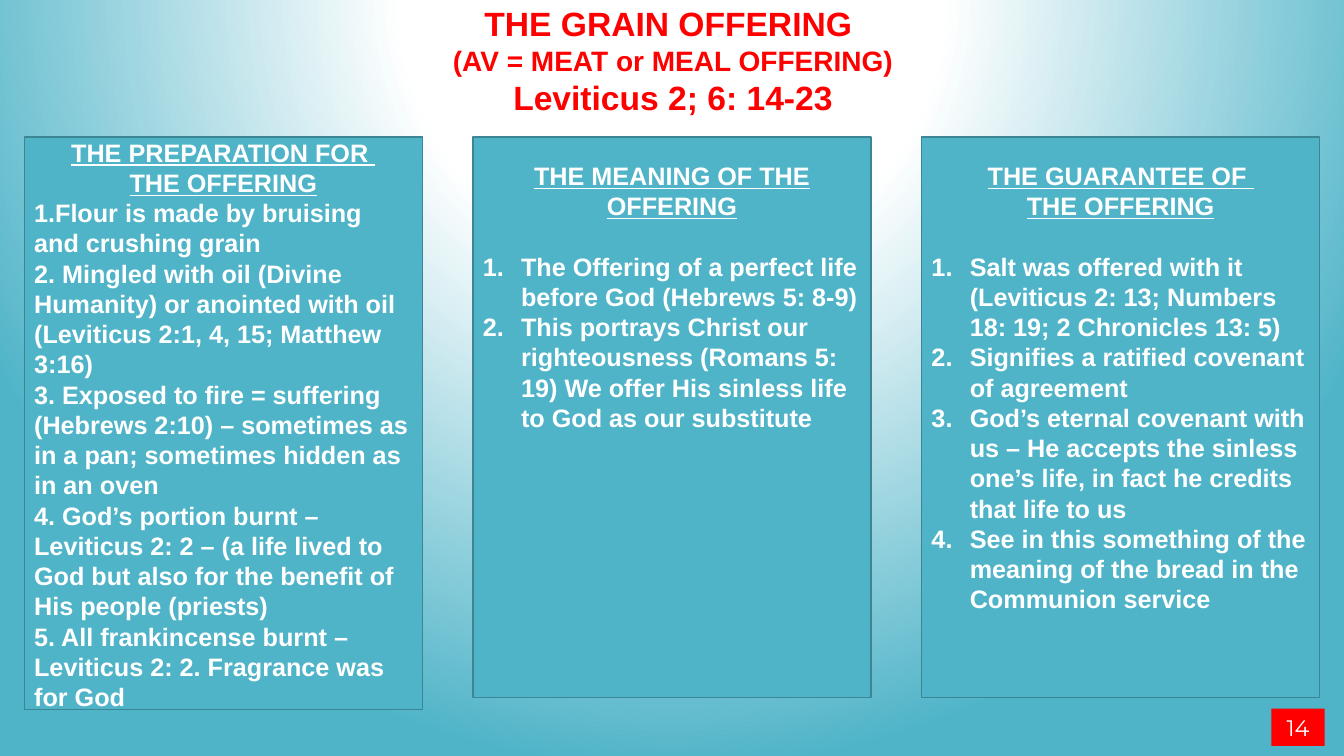
import dataclasses

import lxml.etree
import pptx
import pptx.dml.color
import pptx.enum.shapes
import pptx.enum.text
import pptx.oxml
import pptx.oxml.ns
import pptx.util

Inches = pptx.util.Inches
Pt = pptx.util.Pt
Align = pptx.enum.text.PP_ALIGN
Anchor = pptx.enum.text.MSO_ANCHOR


@dataclasses.dataclass(frozen=True)
class Theme:
    white: str = "FFFFFF"
    teal: str = "50B4C8"
    outline: str = "3B8594"
    red: str = "FF0000"
    font: str = "Arial"
    number_font: str = "Montserrat"
    title_size: int = 24
    subtitle_size: int = 20
    body_size: int = 18
    number_size: int = 16
    line_ratio: float = 1.2


THEME = Theme()

TITLE_LINES = [
    ("THE GRAIN OFFERING ", THEME.title_size),
    ("(AV = MEAT or MEAL OFFERING)", THEME.subtitle_size),
    ("Leviticus 2; 6: 14-23", THEME.title_size),
]

COLUMNS = [
    {
        "heading": ["THE PREPARATION FOR ", "THE OFFERING"],
        "points": [
            "1.Flour is made by bruising and crushing grain",
            "2. Mingled with oil (Divine Humanity) or anointed with oil (Leviticus 2:1, 4, 15; Matthew 3:16)",
            "3. Exposed to fire = suffering (Hebrews 2:10) – sometimes as in a pan; sometimes hidden as in an oven",
            "4. God’s portion burnt – Leviticus 2: 2 – (a life lived to God but also for the benefit of "
            "His people (priests)",
            "5. All frankincense burnt – Leviticus 2: 2. Fragrance was for God",
        ],
        "numbered": False, "height": 5.68, "top_inset": 0,
    },
    {
        "heading": ["THE MEANING OF THE OFFERING"],
        "points": [
            "The Offering of a perfect life before God (Hebrews 5: 8-9)",
            "This portrays Christ our righteousness (Romans 5: 19) We offer His sinless life to God "
            "as our substitute",
        ],
        "numbered": True, "height": 5.56, "top_inset": 0.23,
    },
    {
        "heading": ["THE GUARANTEE OF ", "THE OFFERING"],
        "points": [
            "Salt was offered with it (Leviticus 2: 13; Numbers 18: 19; 2 Chronicles 13: 5)",
            "Signifies a ratified covenant of agreement",
            "God’s eternal covenant with us – He accepts the sinless one’s life, in fact he credits "
            "that life to us",
            "See in this something of the meaning of the bread in the Communion service",
        ],
        "numbered": True, "height": 5.56, "top_inset": 0.23,
    },
]
SLIDE_NUMBER = "14"

COLUMN_LEFT, COLUMN_TOP, COLUMN_WIDTH, COLUMN_PITCH = 0.24, 1.36, 3.95, 4.45
NUMBER_INDENT = 0.38


def rgb(color):
    return pptx.dml.color.RGBColor.from_string(color)


def set_background(slide):
    """Radial gradient centred above the slide."""
    slide.background.fill.solid()
    properties = slide.background.fill._xPr
    for child in list(properties):
        properties.remove(child)
    stops = "".join(
        f'<a:gs pos="{percent * 1000}"><a:srgbClr val="{color}"/></a:gs>'
        for percent, color in [(0, THEME.white), (35, THEME.white), (100, THEME.teal)])
    properties.append(pptx.oxml.parse_xml(
        f'<a:gradFill {pptx.oxml.ns.nsdecls("a")} rotWithShape="1"><a:gsLst>{stops}</a:gsLst>'
        '<a:path path="circle"><a:fillToRect l="50000" t="-80000" r="50000" b="180000"/></a:path>'
        '</a:gradFill>'))
    properties.append(properties.makeelement(pptx.oxml.ns.qn("a:effectLst")))


def add_paragraph(frame, text, size, color, align=Align.LEFT, font=THEME.font, bold=True, underline=False):
    first = frame.paragraphs[0]
    paragraph = frame.add_paragraph() if first.runs else first
    paragraph.alignment = align
    paragraph.line_spacing = Pt(size * THEME.line_ratio)
    paragraph.space_before = paragraph.space_after = Pt(0)
    run = paragraph.add_run()
    run.text = text
    run.font.name = font
    run.font.size = Pt(size)
    run.font.bold = bold
    run.font.underline = underline
    run.font.color.rgb = rgb(color)
    return paragraph


def number_paragraph(paragraph):
    properties = paragraph._p.get_or_add_pPr()
    properties.set("marL", str(Inches(NUMBER_INDENT)))
    properties.set("indent", str(-Inches(NUMBER_INDENT)))
    lxml.etree.SubElement(properties, pptx.oxml.ns.qn("a:buAutoNum"), type="arabicPeriod")


def add_box(slide, left, top, width, height, fill, outline=None):
    box = slide.shapes.add_shape(
        pptx.enum.shapes.MSO_SHAPE.RECTANGLE, Inches(left), Inches(top), Inches(width), Inches(height))
    box.shadow.inherit = False
    box.fill.solid()
    box.fill.fore_color.rgb = rgb(fill)
    if outline:
        box.line.color.rgb = rgb(outline)
        box.line.width = Pt(1)
    else:
        box.line.fill.background()
    box.text_frame.word_wrap = True
    return box


def add_title(slide):
    title = slide.shapes.title
    title.left, title.top, title.width, title.height = map(Inches, (0.01, -0.02, 13.33, 1.25))
    frame = title.text_frame
    frame.word_wrap = True
    frame.auto_size = pptx.enum.text.MSO_AUTO_SIZE.NONE
    frame.vertical_anchor = Anchor.TOP
    for text, size in TITLE_LINES:
        add_paragraph(frame, text, size, THEME.red, Align.CENTER)


def add_column(slide, index, column):
    box = add_box(slide, COLUMN_LEFT + index * COLUMN_PITCH, COLUMN_TOP, COLUMN_WIDTH,
                  column["height"], THEME.teal, THEME.outline)
    frame = box.text_frame
    frame.vertical_anchor = Anchor.TOP
    frame.margin_top = Inches(column["top_inset"])
    frame.margin_bottom = 0
    for text in column["heading"]:
        heading = add_paragraph(frame, text, THEME.body_size, THEME.white, Align.CENTER, underline=True)
    if column["numbered"]:
        heading.space_after = Pt(THEME.body_size * THEME.line_ratio)
    for text in column["points"]:
        point = add_paragraph(frame, text, THEME.body_size, THEME.white)
        if column["numbered"]:
            number_paragraph(point)


def add_slide_number(slide):
    frame = add_box(slide, 12.61, 7.03, 0.53, 0.37, THEME.red).text_frame
    frame.vertical_anchor = Anchor.MIDDLE
    add_paragraph(frame, SLIDE_NUMBER, THEME.number_size, THEME.white, Align.CENTER,
                  THEME.number_font, bold=False)


def main():
    deck = pptx.Presentation()
    deck.slide_width, deck.slide_height = Inches(13.33), Inches(7.5)
    slide = deck.slides.add_slide(deck.slide_layouts.get_by_name("Title Only"))
    set_background(slide)
    add_title(slide)
    for index, column in enumerate(COLUMNS):
        add_column(slide, index, column)
    add_slide_number(slide)
    deck.save("out.pptx")


if __name__ == "__main__":
    main()
